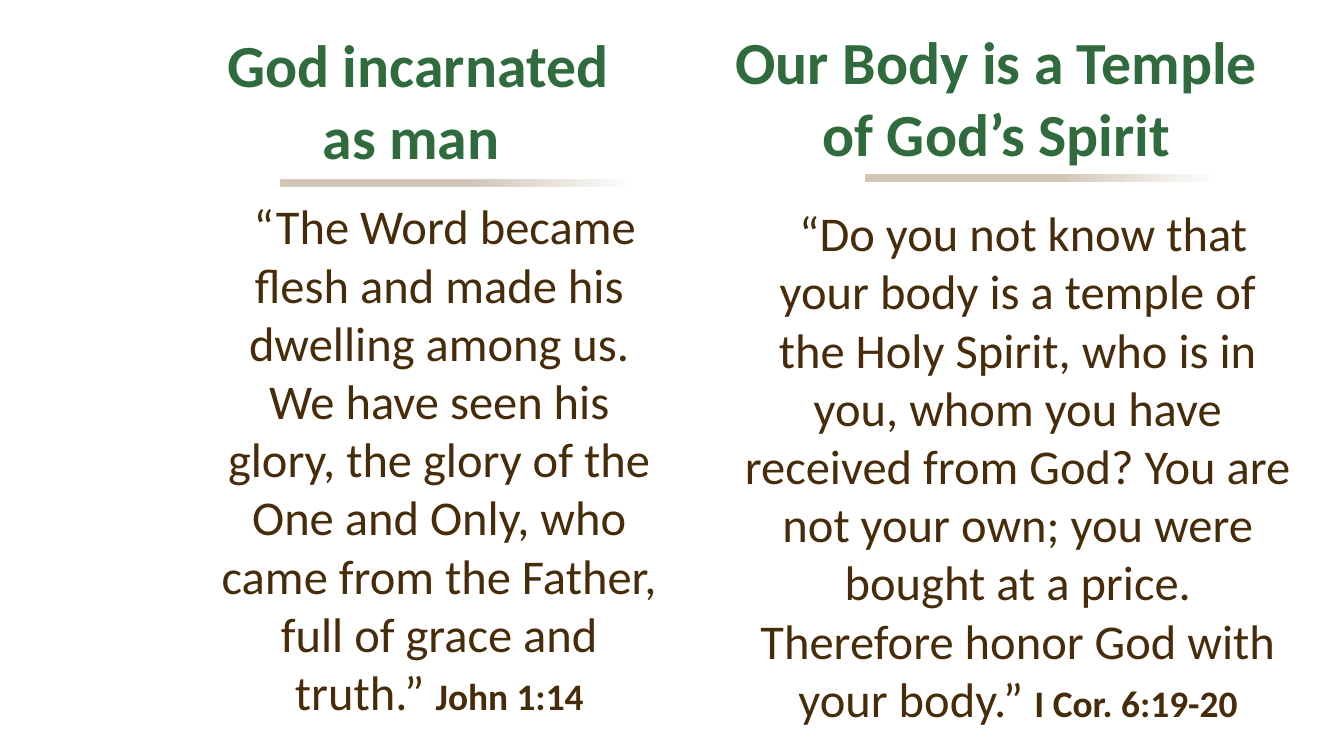
from lxml.etree import SubElement
from pptx import Presentation
from pptx.dml.color import RGBColor
from pptx.enum.shapes import MSO_SHAPE as Shape
from pptx.enum.text import MSO_ANCHOR as Anchor, MSO_AUTO_SIZE as AutoSize, PP_ALIGN as Align
from pptx.oxml.ns import qn
from pptx.util import Inches, Pt

GREEN, BROWN, TAN = "2F6B3D", "472C0A", "9F8867"


def color(value):
    """Return the colour for a hex string."""
    return RGBColor.from_string(value)


def place(part, left, top, width, height):
    """Move a slide part to a box given in inches."""
    part.left, part.top = Inches(left), Inches(top)
    part.width, part.height = Inches(width), Inches(height)


def write(holder, box, runs, ink):
    """Fill a placeholder with one centred paragraph of (text, size, bold) runs."""
    place(holder, *box)
    frame = holder.text_frame
    frame.word_wrap = True
    frame.auto_size = AutoSize.NONE
    frame.vertical_anchor = Anchor.MIDDLE
    paragraph = frame.paragraphs[0]
    props = paragraph._p.get_or_add_pPr()
    props.set("marL", "0")
    props.set("indent", "0")
    SubElement(props, qn("a:buNone"))
    paragraph.alignment = Align.CENTER
    paragraph.space_before = Pt(0)
    for text, size, bold in runs:
        run = paragraph.add_run()
        run.text = text
        run.font.name = "Calibri"
        run.font.size = Pt(size)
        run.font.bold = bold
        run.font.color.rgb = color(ink)


def add_rule(slide, left, top):
    """Draw the tan rule that fades out to the right."""
    rule = slide.shapes.add_shape(
        Shape.RECTANGLE, Inches(left), Inches(top), Inches(2.65), Inches(0.05))
    rule.shadow.inherit = False
    rule.line.fill.background()
    rule.fill.gradient()
    rule.fill.gradient_angle = 0
    for stop, position, opacity in zip(rule.fill.gradient_stops, (0.54, 0.98), (47, 0)):
        stop.position = position
        stop.color.rgb = color(TAN)
        tint = stop._gs.find(qn("a:srgbClr"))
        SubElement(tint, qn("a:alpha"), val=str(opacity * 1000))


def add_column(slide, box, indexes, heading, verse, citation, verse_box, rule_at):
    """Build a heading, rule and verse, placed relative to the heading's box."""
    left, top, _, _ = box
    heading_index, verse_index = indexes
    holders = {holder.placeholder_format.idx: holder for holder in slide.placeholders}
    write(holders[heading_index], box, [(heading, 32, True)], GREEN)
    dx, dy, width, height = verse_box
    write(holders[verse_index], (left + dx, top + dy, width, height),
          [(verse, 26, False), (citation, 20, True)], BROWN)
    add_rule(slide, left + rule_at[0], top + rule_at[1])


def main():
    """Build the two-column scripture slide."""
    deck = Presentation()
    deck.slide_width, deck.slide_height = Inches(10), Inches(10 * 9 / 16)
    slide = deck.slides.add_slide(deck.slide_layouts.get_by_name("Comparison"))
    title = slide.shapes.title._element
    title.getparent().remove(title)
    add_column(
        slide, (1.48, 0.15, 3.26, 1.18), (1, 2), "God incarnated as man ",
        " “The Word became flesh and made his dwelling among us. We have seen his "
        "glory, the glory of the One and Only, who came from the Father, full of "
        "grace and truth.” ", "John 1:14",
        (0, 1.24, 3.58, 4.04), (0.61, 1.19))
    add_column(
        slide, (5.24, 0.13, 4.35, 1.18), (3, 4), "Our Body is a Temple of God’s Spirit",
        " “Do you not know that your body is a temple of the Holy Spirit, who is in "
        "you, whom you have received from God? You are not your own; you were bought "
        "at a price. Therefore honor God with your body.” ", "I Cor. 6:19-20",
        (0.19, 1.31, 4.29, 4.04), (1.2, 1.17))
    deck.save("out.pptx")


if __name__ == "__main__":
    main()
